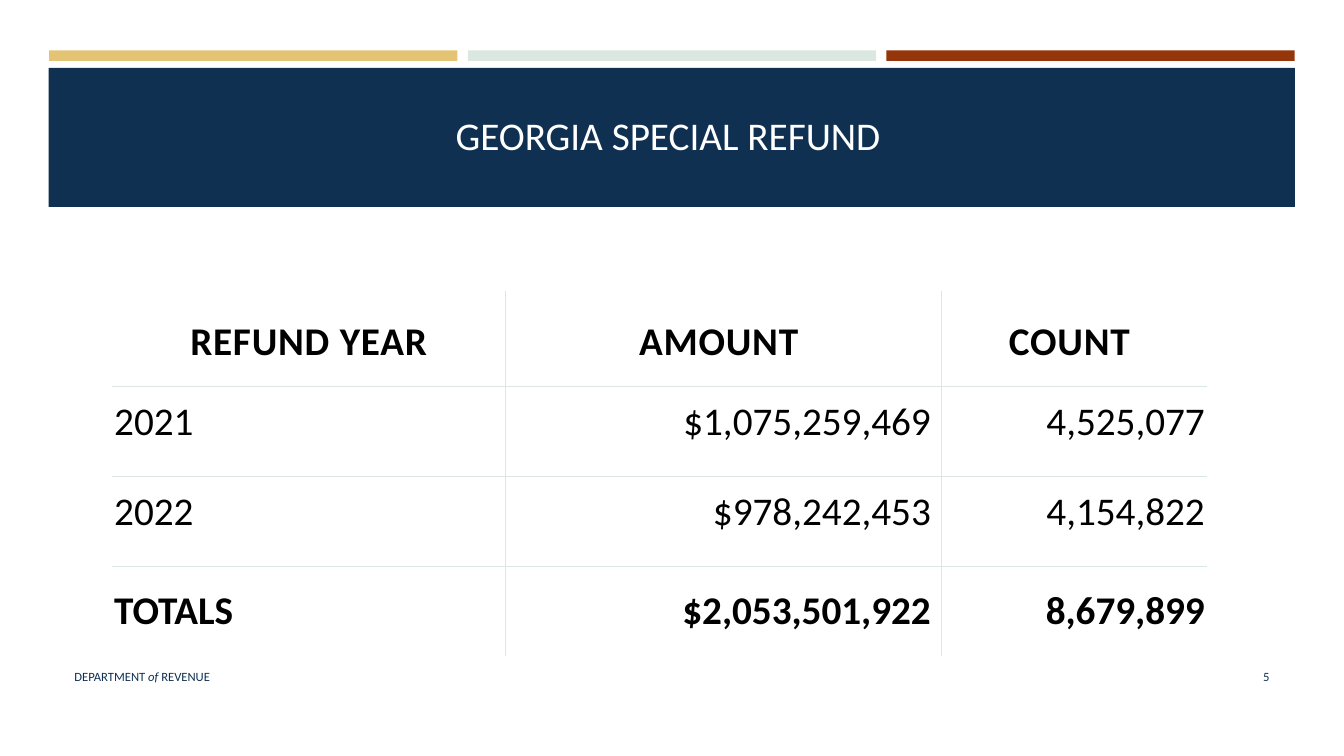
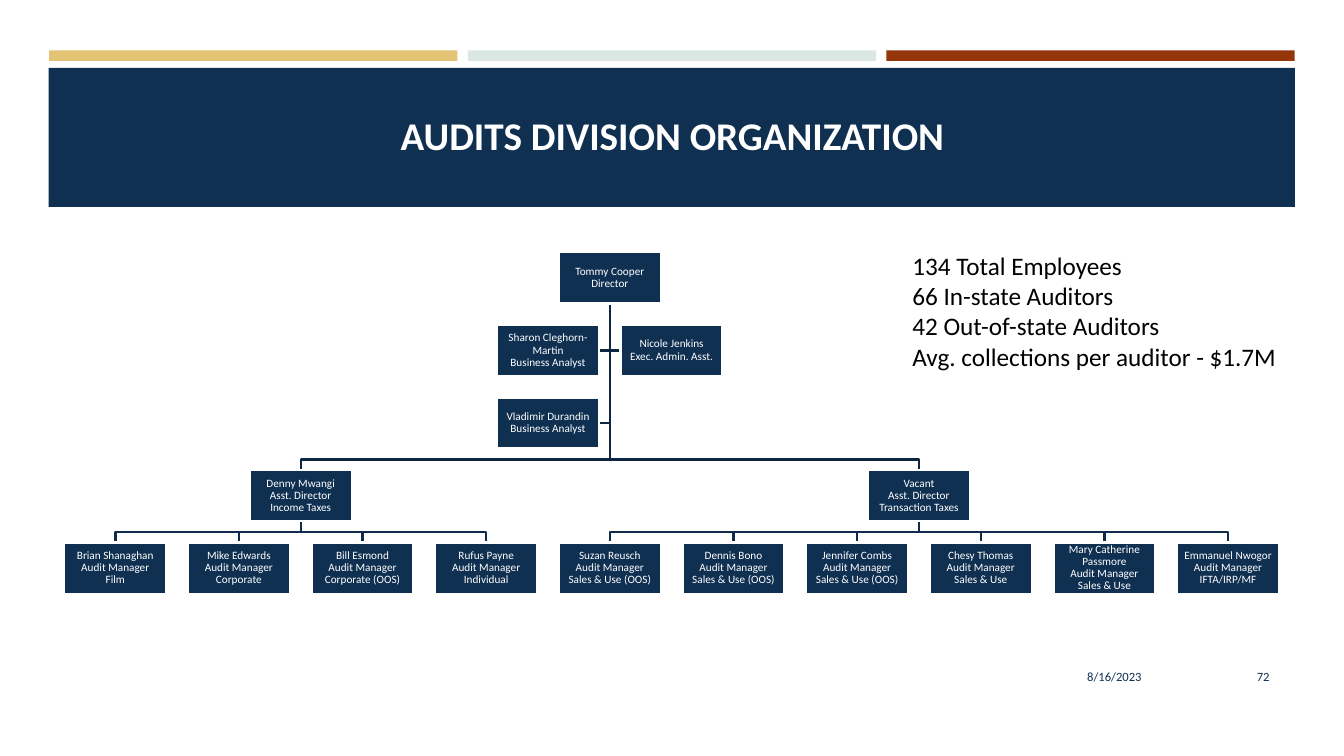
from lxml.etree import SubElement
from pptx import Presentation
from pptx.dml.color import RGBColor
from pptx.enum.shapes import MSO_SHAPE as Preset
from pptx.enum.text import MSO_ANCHOR as Anchor, PP_ALIGN as Align
from pptx.oxml.ns import qn
from pptx.util import Inches, Pt

COLORS = {
    "navy": "103052", "upper_line": "0D2642", "lower_line": "0F2C4A",
    "gold": "E3C475", "mint": "DAE8E1", "rust": "95350A",
    "white": "FFFFFF", "black": "000000",
}
FONT = "Calibri"
WIDTH, HEIGHT = Inches(13.333), Inches(7.5)
FOOTER_TOP, FOOTER_HEIGHT = 86.8, 5.33

ORG_LEFT, ORG_TOP = 4.78, 33.35
COLUMN_STEP, ROW_STEP = 9.2, 9.6
BOX_WIDTH, BOX_HEIGHT = 7.6, 6.8

REFUNDS = [
    ("REFUND YEAR", "AMOUNT ", "COUNT "),
    ("2021", "$1,075,259,469 ", "4,525,077"),
    ("2022", "$978,242,453 ", "4,154,822"),
    ("TOTALS", "$2,053,501,922 ", "8,679,899"),
]
REFUND_COLUMNS = [29.25, 32.47, 19.73]
REFUND_ROWS = [12.67, 11.87, 11.87, 11.87]

DIRECTOR = (4, 0, "Tommy Cooper\nDirector")
SUPPORT = [
    (3.5, 1, "Sharon Cleghorn-Martin\nBusiness Analyst"),
    (4.5, 1, "Nicole Jenkins\nExec. Admin. Asst."),
    (3.5, 2, "Vladimir Durandin\nBusiness Analyst"),
]
ASSISTANTS = [
    (1.5, 3, "Denny Mwangi\nAsst. Director\nIncome Taxes"),
    (6.5, 3, "Vacant\nAsst. Director\nTransaction Taxes"),
]
MANAGERS = [(column, 4, text) for column, text in enumerate([
    "Brian Shanaghan\nAudit Manager\nFilm",
    "Mike Edwards\nAudit Manager\nCorporate",
    "Bill Esmond\nAudit Manager\nCorporate (OOS)",
    "Rufus Payne\nAudit Manager\nIndividual",
    "Suzan Reusch\nAudit Manager\nSales & Use (OOS)",
    "Dennis Bono\nAudit Manager\nSales & Use (OOS)",
    "Jennifer Combs\nAudit Manager\nSales & Use (OOS)",
    "Chesy Thomas\nAudit Manager\nSales & Use",
    "Mary Catherine Passmore\nAudit Manager\nSales & Use",
    "Emmanuel Nwogor\nAudit Manager\nIFTA/IRP/MF",
])]
INCOME_TEAM, TRANSACTION_TEAM = MANAGERS[:4], MANAGERS[4:]
STAFF_NOTES = [
    "134 Total Employees", "66 In-state Auditors", "42 Out-of-state Auditors",
    "Avg. collections per auditor - $1.7M",
]


def color(name):
    """Return the named palette colour."""
    return RGBColor.from_string(COLORS[name])


def across(share):
    """Turn a percentage of the slide's width into a length."""
    return round(WIDTH * share / 100)


def down(share):
    """Turn a percentage of the slide's height into a length."""
    return round(HEIGHT * share / 100)


def area(left, top, width, height):
    """Turn percentages of the slide into a position and size."""
    return across(left), down(top), across(width), down(height)


def style(para, size, ink, bold=False, align=Align.LEFT):
    """Format a paragraph and all its runs."""
    para.alignment = align
    for span in para.runs:
        span.font.name = FONT
        span.font.size = Pt(size)
        span.font.bold = bold
        span.font.color.rgb = color(ink)


def add_label(page, place, lines, size, ink, bold=False, align=Align.LEFT,
              anchor=Anchor.MIDDLE, wrap=True):
    """Add a text box with one paragraph per line and return its frame."""
    frame = page.shapes.add_textbox(*area(*place)).text_frame
    frame.word_wrap = wrap
    frame.vertical_anchor = anchor
    frame.text = "\n".join(lines)
    for para in frame.paragraphs:
        style(para, size, ink, bold, align)
    return frame


def add_block(page, place, fill):
    """Add a plain filled rectangle."""
    box = page.shapes.add_shape(Preset.RECTANGLE, *area(*place))
    box.shadow.inherit = False
    box.fill.solid()
    box.fill.fore_color.rgb = color(fill)
    box.line.fill.background()
    return box


def add_page(deck, title, number, bold=False):
    """Add a slide with the colour bands, title banner and slide number."""
    page = deck.slides.add_slide(deck.slide_layouts[6])
    for index, fill in enumerate(("gold", "mint", "rust")):
        add_block(page, (3.66 + 31.15 * index, 6.67, 30.38, 1.4), fill)
    add_block(page, (3.63, 8.97, 92.73, 18.4), "navy")
    add_label(page, (4.8, 10.67, 90.45, 14.4), [title], 28, "white", bold, Align.CENTER)
    add_label(page, (86.6, FOOTER_TOP, 8.6, FOOTER_HEIGHT), [number], 9, "navy",
              align=Align.RIGHT)
    return page


def add_department(page):
    """Add the department name at the foot of the slide."""
    frame = add_label(page, (4.8, FOOTER_TOP, 56.7, FOOTER_HEIGHT), ["DEPARTMENT "],
                      9, "navy")
    para = frame.paragraphs[0]
    for text in ("of ", "REVENUE"):
        para.add_run().text = text
    style(para, 9, "navy")
    para.runs[1].font.italic = True


def set_borders(cell, inner_sides):
    """Draw thin rules on the inner sides of a cell and none on the others."""
    props = cell._tc.get_or_add_tcPr()
    for side in ("L", "R", "T", "B"):
        rule = SubElement(props, qn(f"a:ln{side}"), w=str(Pt(1)))
        if inner_sides[side]:
            fill = SubElement(rule, qn("a:solidFill"))
            SubElement(fill, qn("a:srgbClr"), val=COLORS["mint"])
        else:
            SubElement(rule, qn("a:noFill"))


def format_cell(cell, row, column):
    """Set the margins, text, rules and fill of a refund table cell."""
    header, total = row == 0, row == len(REFUNDS) - 1
    cell.margin_left = cell.margin_right = Inches(0.02)
    cell.margin_top = Inches(0.21 if header else 0.02)
    cell.margin_bottom = Inches(0.21)
    cell.vertical_anchor = Anchor.BOTTOM if header or total else Anchor.MIDDLE
    cell.text_frame.text = REFUNDS[row][column]
    align = Align.CENTER if header else Align.RIGHT if column else Align.LEFT
    para = cell.text_frame.paragraphs[0]
    style(para, 28, "black", header or total, align)
    if header:
        para.runs[0].font._element.set("spc", "60")
    last_column = len(REFUND_COLUMNS) - 1
    set_borders(cell, {"L": column > 0, "R": column < last_column,
                       "T": not header, "B": not total})
    cell.fill.background()


def add_refund_table(page):
    """Add the table of refunds by year."""
    place = area(8.35, 38.5, sum(REFUND_COLUMNS), sum(REFUND_ROWS))
    table = page.shapes.add_table(len(REFUND_ROWS), len(REFUND_COLUMNS), *place).table
    table.first_row = table.horz_banding = False
    for column, share in enumerate(REFUND_COLUMNS):
        table.columns[column].width = across(share)
    for row, share in enumerate(REFUND_ROWS):
        table.rows[row].height = down(share)
        for column in range(len(REFUND_COLUMNS)):
            format_cell(table.cell(row, column), row, column)


def center_x(column):
    """Return the horizontal middle of an organization column."""
    return ORG_LEFT + COLUMN_STEP * column + BOX_WIDTH / 2


def row_top(row):
    """Return the top of an organization row."""
    return ORG_TOP + ROW_STEP * row


def add_bent_line(page, ink, *points):
    """Add an open line with square bends through the points."""
    start, *rest = [(across(x), down(y)) for x, y in points]
    builder = page.shapes.build_freeform(*start)
    builder.add_line_segments(rest, close=False)
    line = builder.convert_to_shape()
    line.shadow.inherit = False
    line.fill.background()
    line.line.color.rgb = color(ink)
    line.line.width = Pt(1.75)


def link_team(page, leader, team, ink):
    """Join a leader to each person in the row below."""
    x, start = center_x(leader[0]), row_top(leader[1]) + BOX_HEIGHT
    for column, row, _ in team:
        member, end = center_x(column), row_top(row)
        bend = end - (ROW_STEP - BOX_HEIGHT) / 2
        add_bent_line(page, ink, (x, start), (x, bend), (member, bend), (member, end))


def link_support(page):
    """Join the director to the support staff on either side."""
    x, start = center_x(DIRECTOR[0]), row_top(DIRECTOR[1]) + BOX_HEIGHT
    for column, row, _ in SUPPORT:
        side = 1 if column > DIRECTOR[0] else -1
        edge = center_x(column) - side * BOX_WIDTH / 2
        middle = row_top(row) + BOX_HEIGHT / 2
        add_bent_line(page, "upper_line", (x, start), (x, middle), (edge, middle))


def add_person(page, column, row, text):
    """Add one box of the organization chart."""
    place = (ORG_LEFT + COLUMN_STEP * column, row_top(row), BOX_WIDTH, BOX_HEIGHT)
    box = add_block(page, place, "navy")
    box.line.color.rgb = color("white")
    box.line.width = Pt(1.75)
    frame = box.text_frame
    frame.word_wrap = True
    frame.vertical_anchor = Anchor.MIDDLE
    frame.margin_left = frame.margin_right = Inches(0.01)
    frame.margin_top = frame.margin_bottom = Inches(0.01)
    para = frame.paragraphs[0]
    para.text = text
    para.line_spacing = 0.9
    style(para, 8, "white", align=Align.CENTER)


def add_organization(page):
    """Add the lines and boxes of the organization chart."""
    link_support(page)
    link_team(page, DIRECTOR, ASSISTANTS, "upper_line")
    for leader, team in zip(ASSISTANTS, (INCOME_TEAM, TRANSACTION_TEAM)):
        link_team(page, leader, team, "lower_line")
    for person in [DIRECTOR, *SUPPORT, *ASSISTANTS, *MANAGERS]:
        add_person(page, *person)


def main():
    """Build and save the deck."""
    deck = Presentation()
    deck.slide_width, deck.slide_height = WIDTH, HEIGHT

    refund_page = add_page(deck, "GEORGIA SPECIAL REFUND ", "5")
    add_department(refund_page)
    add_refund_table(refund_page)

    audit_page = add_page(deck, "AUDITS DIVISION ORGANIZATION", "72", bold=True)
    add_organization(audit_page)
    add_label(audit_page, (62.35, FOOTER_TOP, 23.33, FOOTER_HEIGHT), ["8/16/2023"], 9,
              "navy", align=Align.RIGHT)
    add_label(audit_page, (67.15, 32.45, 28.88, 17.47), STAFF_NOTES, 18, "black",
              anchor=Anchor.TOP, wrap=False)

    deck.save("out.pptx")


if __name__ == "__main__":
    main()
